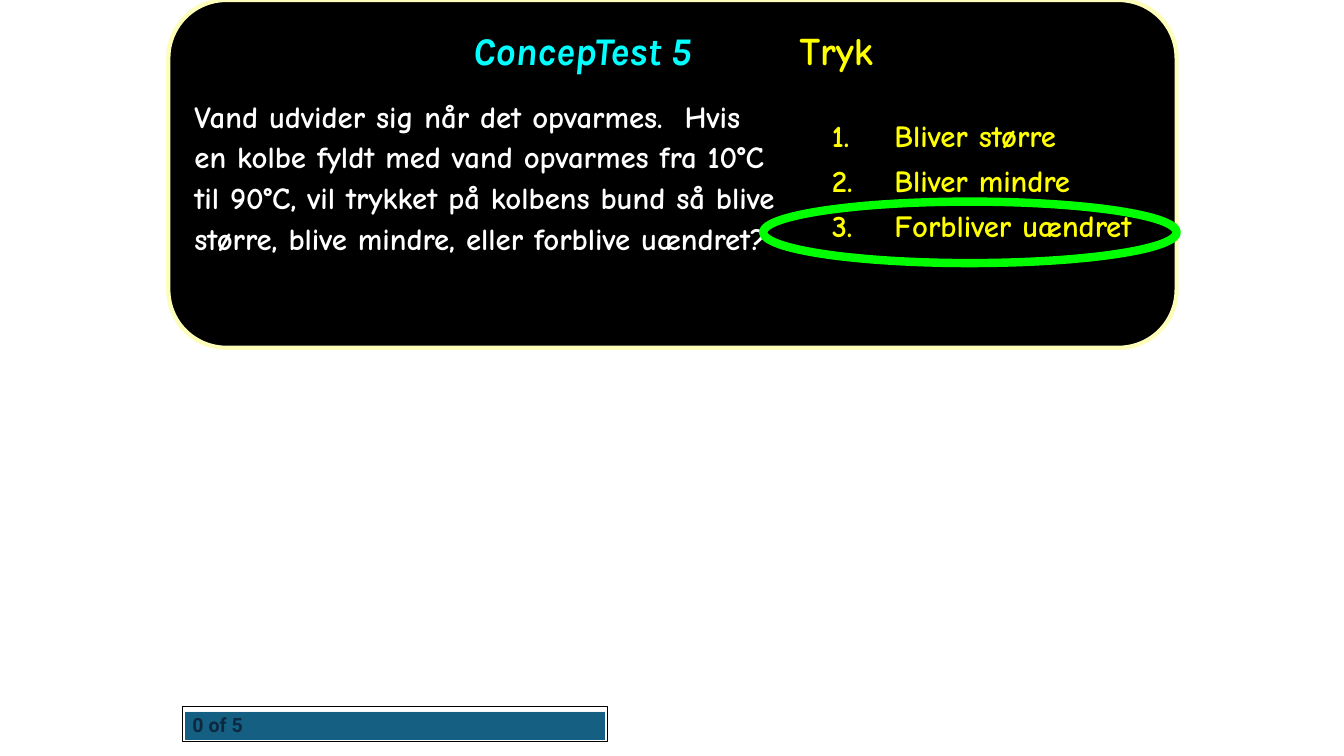
from dataclasses import dataclass
from typing import Optional

from lxml import etree
from pptx import Presentation
from pptx import util as u
from pptx.dml.color import RGBColor
from pptx.enum import dml, shapes, text
from pptx.oxml import ns

BLACK = RGBColor(0x00, 0x00, 0x00)
WHITE = RGBColor(0xFF, 0xFF, 0xFF)
CREAM = RGBColor(0xFC, 0xFE, 0xB9)
CYAN = RGBColor(0x00, 0xFF, 0xFF)
YELLOW = RGBColor(0xFF, 0xFF, 0x00)
GREEN = RGBColor(0x00, 0xFF, 0x00)
TEAL = RGBColor(0x15, 0x60, 0x82)
NAVY = RGBColor(0x0E, 0x28, 0x41)

QUESTION = (
    "Vand udvider sig når det opvarmes.  Hvis en kolbe fyldt med vand opvarmes "
    "fra 10°C til 90°C, vil trykket på kolbens bund så blive større, "
    "blive mindre, eller forblive uændret?"
)
ANSWERS = ["Bliver større", "Bliver mindre", "Forbliver uændret"]


@dataclass(frozen=True)
class Area:
    left: float
    top: float
    width: float
    height: float

    def lengths(self) -> tuple:
        return tuple(map(u.Inches, (self.left, self.top, self.width, self.height)))


@dataclass(frozen=True)
class Figure:
    kind: shapes.MSO_SHAPE
    area: Area
    line: Optional[RGBColor] = None
    weight: float = 0


PANEL = Figure(shapes.MSO_SHAPE.ROUNDED_RECTANGLE, Area(1.67, 0, 10, 3.45), CREAM, 3)
RING = Figure(shapes.MSO_SHAPE.OVAL, Area(7.57, 2, 4.1, 0.61), GREEN, 6)
BAR = Figure(shapes.MSO_SHAPE.RECTANGLE, Area(1.83, 7.06, 4.17, 0.28))
FRAME = Figure(shapes.MSO_SHAPE.RECTANGLE, Area(1.81, 7.01, 4.22, 0.35), BLACK, 0.75)


def draw(target, figure: Figure):
    """Add an unfilled shape to a slide's or group's shapes."""
    shape = target.add_shape(figure.kind, *figure.area.lengths())
    shape.shadow.inherit = False
    shape.fill.background()
    if figure.line is None:
        shape.line.fill.background()
    else:
        shape.line.color.rgb = figure.line
        shape.line.width = u.Pt(figure.weight)
    return shape


def place(shape, area: Area) -> None:
    shape.left, shape.top, shape.width, shape.height = area.lengths()


def style(font, name: str, color: RGBColor, size: Optional[float] = None) -> None:
    font.name = name
    font.color.rgb = color
    font.bold = True
    if size is not None:
        font.size = u.Pt(size)


def add_tab_stop(para, position: float) -> None:
    stops = etree.SubElement(para._p.get_or_add_pPr(), ns.qn("a:tabLst"))
    etree.SubElement(stops, ns.qn("a:tab"), pos=str(u.Inches(position)), algn="l")


def number(para, indent: float) -> None:
    props = para._p.get_or_add_pPr()
    props.set("marL", str(u.Inches(indent)))
    props.set("indent", str(-u.Inches(indent)))
    etree.SubElement(props, ns.qn("a:buFontTx"))
    etree.SubElement(props, ns.qn("a:buAutoNum"), type="arabicPeriod")


def add_title(page) -> None:
    title = page.shapes.title
    place(title, Area(2.17, 0.17, 9, 0.7))
    frame = title.text_frame
    frame.auto_size = text.MSO_AUTO_SIZE.NONE
    frame.vertical_anchor = text.MSO_ANCHOR.MIDDLE
    frame.margin_left = u.Inches(2.52)
    para = frame.paragraphs[0]
    para.alignment = text.PP_ALIGN.LEFT
    para.line_spacing = 0.9
    add_tab_stop(para, 3.24)
    para.font.size = u.Pt(28)
    name = para.add_run()
    name.text = "ConcepTest 5\t"
    style(name.font, "Karla", CYAN)
    name.font.italic = True
    topic = para.add_run()
    topic.text = "Tryk"
    style(topic.font, "Comic Neue", YELLOW)


def add_progress(page) -> None:
    group = page.shapes.add_group_shape()
    bar = draw(group.shapes, BAR)
    bar.fill.patterned()
    bar.fill.pattern = dml.MSO_PATTERN.DARK_VERTICAL
    bar.fill.fore_color.rgb = TEAL
    bar.fill.back_color.rgb = WHITE
    frame = draw(group.shapes, FRAME).text_frame
    frame.word_wrap = False
    frame.vertical_anchor = text.MSO_ANCHOR.MIDDLE
    para = frame.paragraphs[0]
    para.text = "0 of 5"
    para.alignment = text.PP_ALIGN.LEFT
    style(para.font, "Roboto", NAVY, 14)


def add_question(page) -> None:
    box = page.shapes.add_textbox(*Area(1.83, 0.88, 6.02, 2.52).lengths())
    box.text_frame.word_wrap = True
    para = box.text_frame.paragraphs[0]
    para.text = QUESTION
    para.line_spacing = 1.1
    style(para.font, "Comic Neue", WHITE, 22)


def add_answers(page) -> None:
    body = page.placeholders[1]
    place(body, Area(8.15, 1.18, 3.52, 2.12))
    frame = body.text_frame
    frame.auto_size = text.MSO_AUTO_SIZE.NONE
    frame.text = "\n".join(ANSWERS)
    for index, para in enumerate(frame.paragraphs):
        para.line_spacing = 0.8
        para.space_before = u.Pt(11 if index else 0)
        number(para, 0.62)
        style(para.font, "Comic Neue", YELLOW, 22)


def main() -> None:
    deck = Presentation()
    deck.slide_width, deck.slide_height = u.Inches(13.33), u.Inches(7.5)
    page = deck.slides.add_slide(deck.slide_layouts[1])

    # Black panel, moved behind the placeholders
    panel = draw(page.shapes, PANEL)
    panel.fill.solid()
    panel.fill.fore_color.rgb = BLACK
    page.shapes.title.element.addprevious(panel.element)

    # Question and answers
    add_title(page)
    add_question(page)
    add_answers(page)

    # Progress counter and ring round the right answer
    add_progress(page)
    draw(page.shapes, RING)

    deck.save("out.pptx")


if __name__ == "__main__":
    main()
